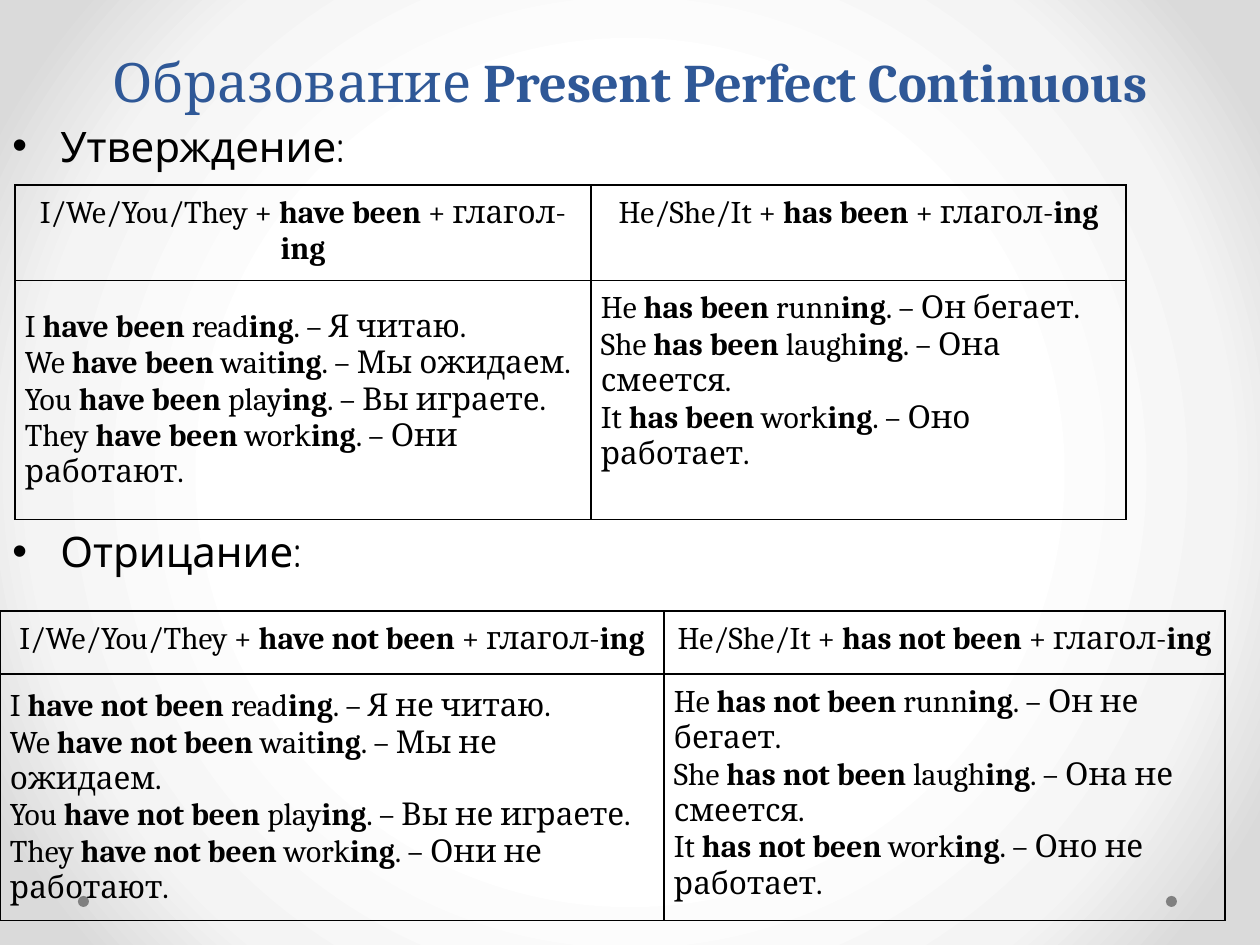
import pptx
import pptx.dml.color
import pptx.enum.shapes
import pptx.enum.text
import pptx.oxml
import pptx.oxml.ns
import pptx.util

SCALE = 914400 // 126
BLUE = pptx.dml.color.RGBColor(0x2F, 0x58, 0x97)
BLACK = pptx.dml.color.RGBColor(0, 0, 0)
GRAY = pptx.dml.color.RGBColor(0x80, 0x80, 0x80)
ANCHOR = pptx.enum.text.MSO_ANCHOR
ALIGN = pptx.enum.text.PP_ALIGN
NAMESPACES = pptx.oxml.ns.nsdecls("a", "p")

PLURAL = [("I", "read", "Я", "читаю"), ("We", "wait", "Мы", "ожидаем"),
          ("You", "play", "Вы", "играете"), ("They", "work", "Они", "работают")]
SINGULAR = [("He", "runn", "Он", "бегает"), ("She", "laugh", "Она", "смеется"),
            ("It", "work", "Оно", "работает")]


def px(value):
    return pptx.util.Emu(value * SCALE)


def box(*lengths):
    return [px(length) for length in lengths]


def apply(target, values):
    for name, value in values.items():
        setattr(target, name, value)


def add_runs(paragraph, marked_text, font, size, color):
    for index, text in enumerate(marked_text.split("*")):
        if text:
            run = paragraph.add_run()
            run.text = text
            apply(run.font, {"name": font, "size": pptx.util.Pt(size), "bold": index % 2 == 1})
            run.font.color.rgb = color


def set_background(slide):
    stops = "".join(
        f'<a:gs pos="{position}000"><a:srgbClr val="{color}"/></a:gs>'
        for position, color in [(50, "FFFFFF"), (76, "F4F4F4"), (92, "DADADA")])
    background = pptx.oxml.parse_xml(
        f'<p:bg {NAMESPACES}><p:bgPr><a:gradFill rotWithShape="1"><a:gsLst>{stops}</a:gsLst>'
        '<a:path path="circle"><a:fillToRect l="50000" t="50000" r="50000" b="50000"/></a:path>'
        '</a:gradFill><a:effectLst/></p:bgPr></p:bg>')
    slide.element.cSld.insert(0, background)


def add_dot(slide, left):
    dot = slide.shapes.add_shape(pptx.enum.shapes.MSO_SHAPE.OVAL, *box(left, 896, 11, 11))
    dot.shadow.inherit = False
    dot.fill.solid()
    dot.fill.fore_color.rgb = GRAY
    dot.line.fill.background()


def set_title(slide, marked_text):
    title = slide.shapes.title
    apply(title, dict(zip(("left", "top", "width", "height"), box(63, 0, 1134, 220))))
    apply(title.text_frame, {"vertical_anchor": ANCHOR.BOTTOM, "margin_bottom": px(107),
                             "word_wrap": True, "auto_size": pptx.enum.text.MSO_AUTO_SIZE.NONE})
    paragraph = title.text_frame.paragraphs[0]
    apply(paragraph, {"alignment": ALIGN.CENTER, "line_spacing": pptx.util.Pt(58)})
    add_runs(paragraph, marked_text, "Cambria", 31, BLUE)


def add_bullets(slide, items):
    frame = slide.shapes.add_textbox(*box(0, 114, 1260, 790)).text_frame
    frame.word_wrap = True
    for index, (text, space) in enumerate(items):
        paragraph = frame.paragraphs[0] if index == 0 else frame.add_paragraph()
        paragraph.space_before = px(space)
        add_runs(paragraph, text, "Quicksand", 24, BLACK)
        properties = paragraph._p.get_or_add_pPr()
        properties.set("marL", str(px(48)))
        properties.set("indent", str(-px(48)))
        for bullet in ('<a:buFont {} typeface="Arial"/>', '<a:buChar {} char="•"/>'):
            properties.append(pptx.oxml.parse_xml(bullet.format(NAMESPACES)))


def add_borders(cell):
    properties = cell._tc.get_or_add_tcPr()
    for index, side in enumerate(("lnL", "lnR", "lnT", "lnB")):
        properties.insert(index, pptx.oxml.parse_xml(
            f'<a:{side} {NAMESPACES} w="12700"><a:solidFill><a:srgbClr val="000000"/>'
            f'</a:solidFill><a:prstDash val="solid"/></a:{side}>'))


def fill_cell(cell, lines, alignment, anchor):
    margins = ("margin_left", "margin_right", "margin_top", "margin_bottom")
    apply(cell, dict.fromkeys(margins, px(10)))
    cell.vertical_anchor = anchor
    cell.fill.background()
    add_borders(cell)
    for index, line in enumerate(lines):
        frame = cell.text_frame
        paragraph = frame.paragraphs[0] if index == 0 else frame.add_paragraph()
        paragraph.alignment = alignment
        add_runs(paragraph, line, "Cambria", 18, BLACK)


def add_forms_table(slide, left, top, widths, heights, english="", russian=""):
    table = slide.shapes.add_table(
        2, 2, *box(left, top, sum(widths), sum(heights))).table
    apply(table, {"first_row": False, "horz_banding": False})
    for column, width in zip(table.columns, widths):
        column.width = px(width)
    for row, height in zip(table.rows, heights):
        row.height = px(height)
    groups = [("I/We/You/They", "have", PLURAL, ANCHOR.MIDDLE),
              ("He/She/It", "has", SINGULAR, ANCHOR.TOP)]
    for column, (pronouns, verb, examples, anchor) in enumerate(groups):
        auxiliary = f"{verb}{english} been"
        header = f"{pronouns} + *{auxiliary}* + глагол-*ing*"
        sentences = [f"{pronoun} *{auxiliary}* {stem}*ing*. – {subject}{russian} {predicate}."
                     for pronoun, stem, subject, predicate in examples]
        fill_cell(table.cell(0, column), [header], ALIGN.CENTER, ANCHOR.TOP)
        fill_cell(table.cell(1, column), sentences, ALIGN.LEFT, anchor)


def main():
    presentation = pptx.Presentation()
    apply(presentation, {"slide_width": px(1260), "slide_height": px(945)})
    slide = presentation.slides.add_slide(presentation.slide_layouts[5])
    set_background(slide)
    for left in (1166, 78):
        add_dot(slide, left)
    set_title(slide, "Образование *Present Perfect Continuous*")
    add_bullets(slide, [("Утверждение:", 0), ("Отрицание:", 355)])
    add_forms_table(slide, 15, 185, (576, 535), (93, 239))
    add_forms_table(slide, 0, 611, (664, 561), (63, 239), " not", " не")
    presentation.save("out.pptx")


if __name__ == "__main__":
    main()
